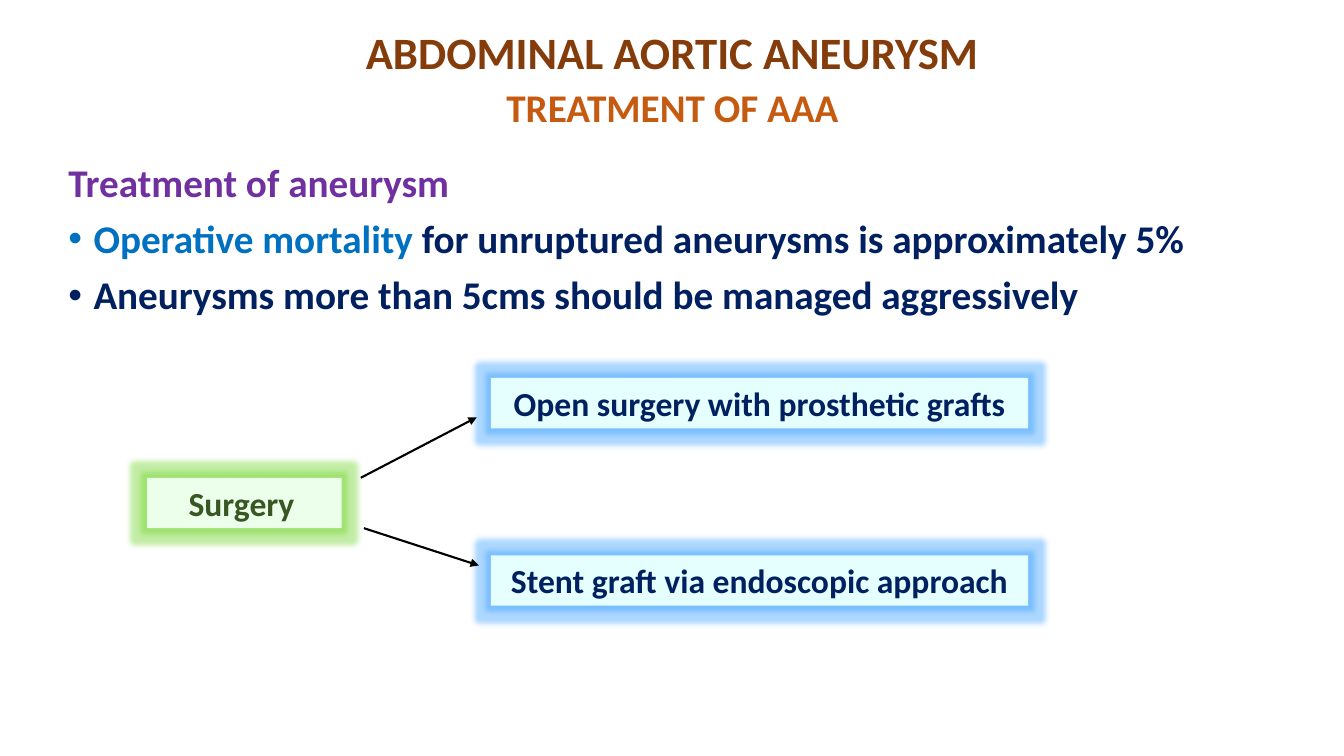
import dataclasses

import lxml.etree
import pptx
import pptx.dml.color
import pptx.enum.shapes
import pptx.enum.text
import pptx.oxml.ns
import pptx.util

Pt = pptx.util.Pt
qn = pptx.oxml.ns.qn
CENTER = pptx.enum.text.PP_ALIGN.CENTER
MIDDLE = pptx.enum.text.MSO_ANCHOR.MIDDLE


@dataclasses.dataclass(frozen=True)
class Theme:
    font: str = "Calibri"
    title_size: int = 32
    body_size: int = 28
    box_size: int = 24
    space_size: int = 18
    brown: str = "843C0B"
    orange: str = "C55A11"
    purple: str = "7030A0"
    blue: str = "0070C0"
    navy: str = "002060"
    green: str = "385723"
    black: str = "000000"
    pale_green: str = "EBFFEB"
    pale_blue: str = "E5FFFF"
    green_glow: str = "69D320"
    blue_glow: str = "319BFF"


THEME = Theme()


def rgb(color):
    return pptx.dml.color.RGBColor.from_string(color)


def add_run(paragraph, text, size, color, bold=True):
    run = paragraph.add_run()
    run.text = text
    run.font.name = THEME.font
    run.font.size = Pt(size)
    run.font.bold = bold
    run.font.color.rgb = rgb(color)


def add_text_box(slide, left, top, width, height):
    frame = slide.shapes.add_textbox(Pt(left), Pt(top), Pt(width), Pt(height)).text_frame
    frame.word_wrap = True
    return frame


def add_title(slide, title, subtitle):
    frame = add_text_box(slide, 66.24, 1.44, 828, 104.4)
    frame.vertical_anchor = MIDDLE
    paragraph = frame.paragraphs[0]
    paragraph.alignment = CENTER
    paragraph.line_spacing = 1.1
    paragraph.space_after = Pt(12)
    add_run(paragraph, title, THEME.title_size, THEME.brown)
    paragraph.add_line_break()
    add_run(paragraph, subtitle, THEME.body_size, THEME.orange)


def add_bullet(paragraph):
    properties = paragraph._p.get_or_add_pPr()
    properties.set("marL", str(Pt(18)))
    properties.set("indent", str(-Pt(18)))
    font = lxml.etree.SubElement(properties, qn("a:buFont"))
    font.set("typeface", "Arial")
    lxml.etree.SubElement(properties, qn("a:buChar")).set("char", "•")


def add_body(slide, heading, bullets):
    frame = add_text_box(slide, 41.76, 113.04, 890.64, 128.88)
    paragraph = frame.paragraphs[0]
    paragraph.line_spacing = 0.9
    add_run(paragraph, heading, THEME.body_size, THEME.purple)
    for runs in bullets:
        paragraph = frame.add_paragraph()
        add_bullet(paragraph)
        paragraph.line_spacing = 0.9
        paragraph.space_before = Pt(10)
        for text, color in runs:
            add_run(paragraph, text, THEME.body_size, color)


def add_glow(shape, color):
    effects = shape._element.spPr.get_or_add_effectLst()
    glow = lxml.etree.SubElement(effects, qn("a:glow"), rad=str(Pt(8)))
    tint = lxml.etree.SubElement(glow, qn("a:srgbClr"), val=color)
    lxml.etree.SubElement(tint, qn("a:alpha"), val="40000")


def add_glowing_box(slide, left, top, width, text, color, fill, glow):
    shape = slide.shapes.add_shape(
        pptx.enum.shapes.MSO_SHAPE.RECTANGLE, Pt(left), Pt(top), Pt(width), Pt(36))
    shape.shadow.inherit = False
    shape.fill.solid()
    shape.fill.fore_color.rgb = rgb(fill)
    shape.line.fill.background()
    add_glow(shape, glow)
    frame = shape.text_frame
    frame.word_wrap = True
    frame.vertical_anchor = pptx.enum.text.MSO_ANCHOR.TOP
    paragraph = frame.paragraphs[0]
    paragraph.alignment = CENTER
    add_run(paragraph, text, THEME.box_size, color)
    return paragraph


def add_arrow(slide, start, end):
    connector = slide.shapes.add_connector(
        pptx.enum.shapes.MSO_CONNECTOR.STRAIGHT, *map(Pt, start + end))
    connector.line.color.rgb = rgb(THEME.black)
    connector.line.width = Pt(1.5)
    lxml.etree.SubElement(connector.line._get_or_add_ln(), qn("a:tailEnd"), type="triangle")
    lxml.etree.SubElement(connector._element.spPr, qn("a:effectLst"))


def main():
    presentation = pptx.Presentation()
    presentation.slide_width = Pt(960)
    presentation.slide_height = Pt(540)
    slide = presentation.slides.add_slide(presentation.slide_layouts[6])

    add_body(slide, "Treatment of aneurysm", [
        [("Operative mortality ", THEME.blue),
         ("for unruptured aneurysms is approximately 5%", THEME.navy)],
        [("Aneurysms more than 5cms should be managed aggressively", THEME.navy)],
    ])
    add_title(slide, "ABDOMINAL AORTIC ANEURYSM", "TREATMENT OF AAA")

    surgery = add_glowing_box(slide, 105.12, 341.28, 138.96, "Surgery",
                              THEME.green, THEME.pale_green, THEME.green_glow)
    add_run(surgery, " ", THEME.space_size, THEME.black, bold=False)
    for top, option in ((270, "Open surgery with prosthetic grafts"),
                        (396.72, "Stent graft via endoscopic approach")):
        add_glowing_box(slide, 350.64, top, 383.76, option,
                        THEME.navy, THEME.pale_blue, THEME.blue_glow)

    add_arrow(slide, (257.76, 341.28), (340.56, 298.08))
    add_arrow(slide, (259.92, 377.28), (342, 403.92))
    presentation.save("out.pptx")


if __name__ == "__main__":
    main()
